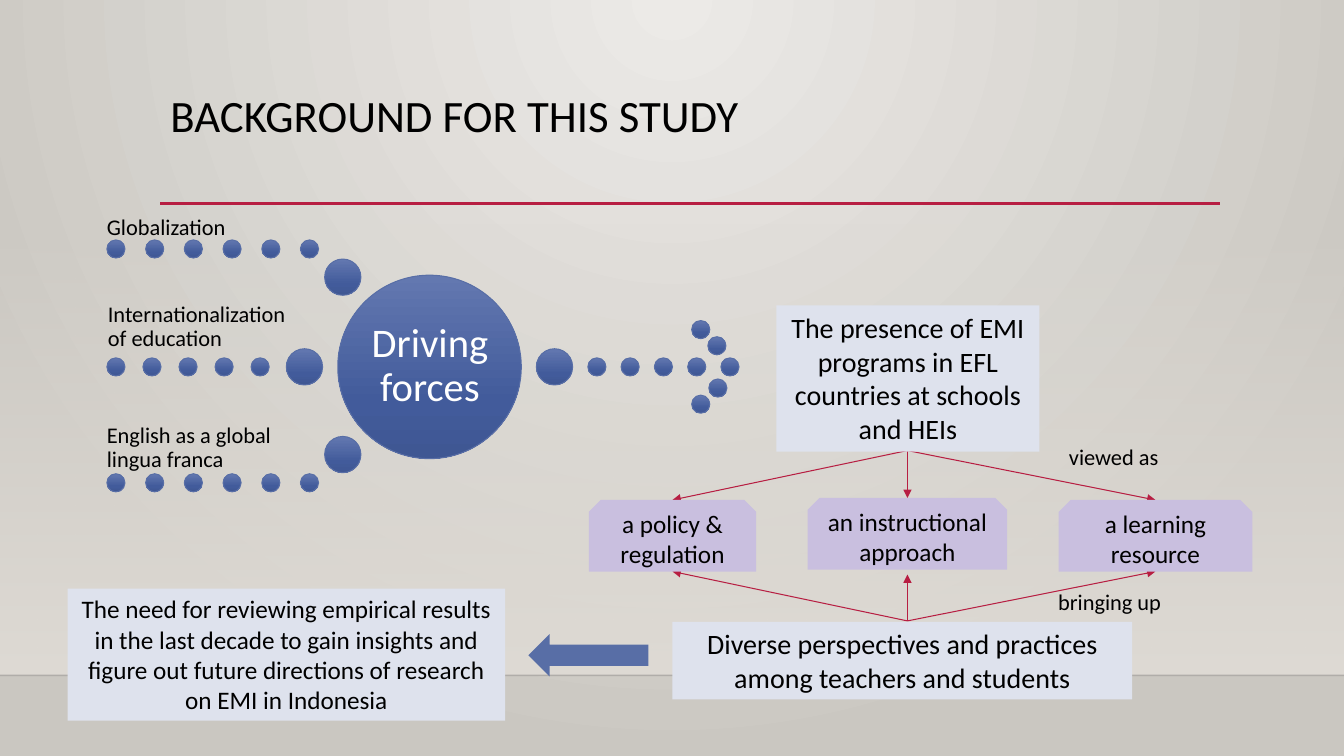
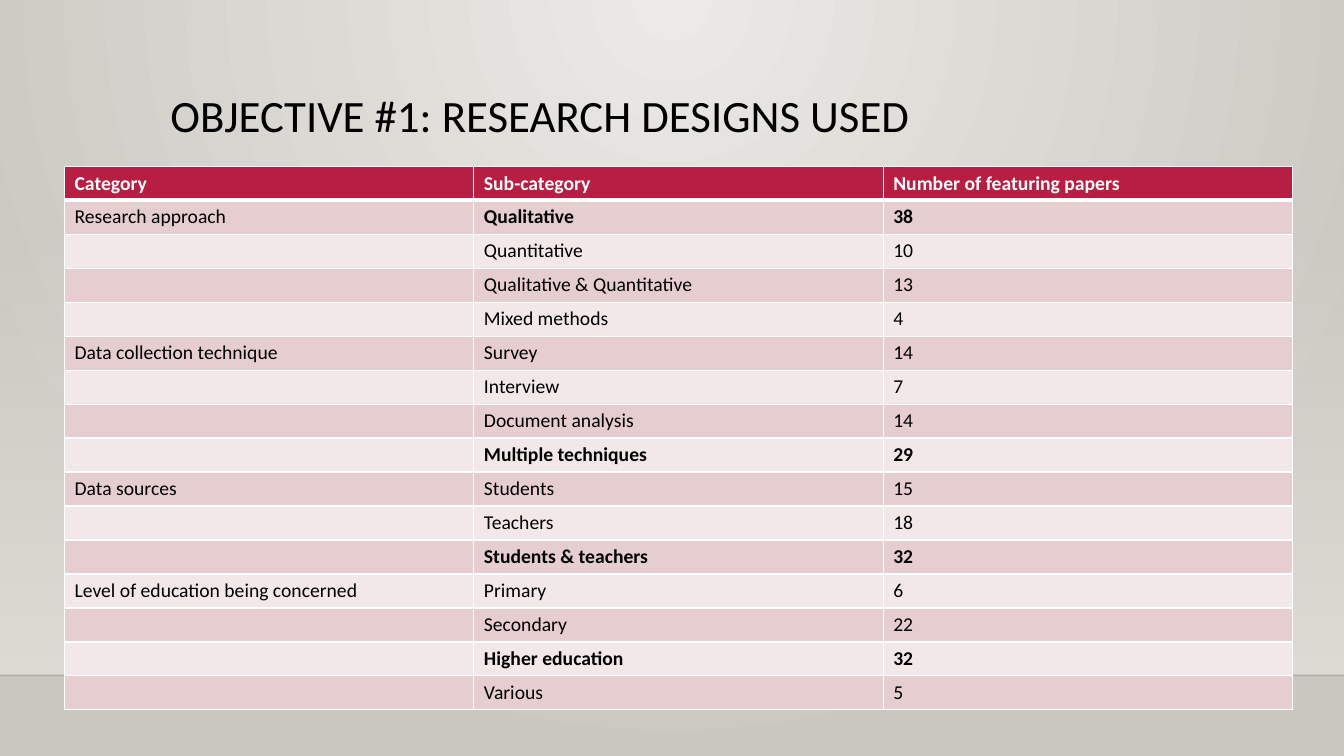
from dataclasses import dataclass
from typing import NamedTuple, Optional

from lxml.etree import SubElement
from pptx import Presentation
from pptx.dml.color import RGBColor
from pptx.enum.shapes import MSO_CONNECTOR as Connector, MSO_SHAPE as Shape
from pptx.enum.text import MSO_ANCHOR as Anchor, MSO_AUTO_SIZE as AutoSize, PP_ALIGN as Align
from pptx.oxml import parse_xml
from pptx.oxml.ns import nsdecls, qn
from pptx.util import Inches, Pt

FONT = "Calibri"
BLACK = RGBColor(0x00, 0x00, 0x00)
HORIZON = RGBColor(0x00, 0x00, 0x01)
WHITE = RGBColor(0xFF, 0xFF, 0xFF)
CRIMSON = RGBColor(0xB7, 0x1E, 0x42)
BLUE = RGBColor(0x58, 0x6E, 0xA6)
PALE_BLUE = RGBColor(0xDE, 0xE2, 0xED)
LILAC = RGBColor(0xC9, 0xBF, 0xDF)
ROSE = RGBColor(0xE6, 0xCD, 0xCF)
PALE_ROSE = RGBColor(0xF3, 0xE8, 0xE9)
WALL_LIGHT = RGBColor(0xEC, 0xEA, 0xE7)
WALL_DARK = RGBColor(0xCA, 0xC7, 0xC1)
PANEL = RGBColor(0xDF, 0xDB, 0xD5)
BALL_TOP = RGBColor(0x63, 0x78, 0xB0)
BALL_MIDDLE = RGBColor(0x42, 0x5B, 0x9B)
BALL_BOTTOM = RGBColor(0x3F, 0x57, 0x93)

DOT = 0.18
BALL = 0.36
HUB = 1.82
DOWNWARD = '<a:lin ang="5400000" scaled="0"/>'
FROM_TOP = '<a:path path="circle"><a:fillToRect l="43000" r="43000" b="100000"/></a:path>'


class Stop(NamedTuple):
    percent: int
    color: RGBColor
    opacity: int = 100


BALL_STOPS = [Stop(0, BALL_TOP), Stop(69, BALL_MIDDLE), Stop(100, BALL_BOTTOM)]


class Point(NamedTuple):
    x: float
    y: float


class DotRow(NamedTuple):
    first: float
    last: float
    top: float
    count: int


class Force(NamedTuple):
    text: str
    left: float
    top: float
    width: float


@dataclass
class Panel:
    text: str
    left: float
    top: float
    width: float
    height: float
    size: int
    color: Optional[RGBColor] = PALE_BLUE
    outline: Shape = Shape.RECTANGLE
    anchor: Anchor = Anchor.TOP


class Finding(NamedTuple):
    category: str
    subcategory: str
    papers: str
    leading: bool = False


DOT_ROWS = [
    DotRow(1.06, 2.98, 2.38, 6),
    DotRow(1.06, 2.49, 3.55, 5),
    DotRow(1.06, 2.98, 4.70, 6),
    DotRow(5.83, 7.15, 3.55, 5),
]
ARROW_TIP = [Point(6.86, 3.18), Point(7.02, 3.34), Point(7.03, 3.76), Point(6.86, 3.92)]
BALLS = [Point(3.22, 2.57), Point(2.84, 3.46), Point(3.22, 4.33), Point(5.32, 3.46)]
FORCES = [
    Force("Globalization", 1.06, 1.92, 2.11),
    Force("Internationalization of education", 1.07, 3.03, 1.88),
    Force("English as a global lingua franca", 1.06, 4.23, 2.11),
]
VIEWS = [
    Panel(text, left, top, width, 0.71, 18, LILAC, Shape.SNIP_2_SAME_RECTANGLE, Anchor.MIDDLE)
    for text, left, top, width in [
        ("a policy & regulation", 5.84, 4.96, 1.66),
        ("an instructional approach", 8.01, 4.94, 1.98),
        ("a learning resource", 10.5, 4.96, 1.92),
    ]
]
STATEMENTS = [
    Panel("The presence of EMI programs in EFL countries at schools and HEIs",
          7.7, 3.03, 2.61, 1.45, 20),
    Panel("Diverse perspectives and practices among teachers and students",
          6.67, 6.17, 4.56, 0.77, 20),
    Panel("The need for reviewing empirical results in the last decade to gain insights "
          "and figure out future directions of research on EMI in Indonesia",
          0.67, 5.84, 4.34, 1.31, 18),
]
RELATIONS = [
    Panel("viewed as", 10.27, 4.35, 1.55, 0.37, 16, None),
    Panel("bringing up", 10.23, 5.79, 1.55, 0.37, 16, None),
]
FANS = [
    (Point(9, 4.47), [Point(6.67, 4.96), Point(9, 4.94), Point(11.46, 4.96)]),
    (Point(9, 6.16), [Point(6.67, 5.67), Point(9, 5.7), Point(11.46, 5.67)]),
]
HEADINGS = ("Category", "Sub-category", "Number of featuring papers")
FINDINGS = [
    Finding("Research approach", "Qualitative", "38", True),
    Finding("", "Quantitative", "10"),
    Finding("", "Qualitative & Quantitative", "13"),
    Finding("", "Mixed methods", "4"),
    Finding("Data collection technique", "Survey", "14"),
    Finding("", "Interview", "7"),
    Finding("", "Document analysis", "14"),
    Finding("", "Multiple techniques", "29", True),
    Finding("Data sources", "Students", "15"),
    Finding("", "Teachers", "18"),
    Finding("", "Students & teachers", "32", True),
    Finding("Level of education being concerned", "Primary", "6"),
    Finding("", "Secondary", "22"),
    Finding("", "Higher education", "32", True),
    Finding("", "Various", "5"),
]


def set_gradient(holder, stops: list[Stop], direction: str) -> None:
    marks = "".join(
        f'<a:gs pos="{stop.percent * 1000}"><a:srgbClr val="{stop.color}">'
        f'<a:alpha val="{stop.opacity * 1000}"/></a:srgbClr></a:gs>'
        for stop in stops
    )
    gradient = parse_xml(
        f'<a:gradFill {nsdecls("a")} rotWithShape="1"><a:gsLst>{marks}</a:gsLst>'
        f"{direction}</a:gradFill>"
    )
    holder.replace(holder.find(qn("a:solidFill")), gradient)


def add_run(paragraph, text: str, size: int, color: RGBColor = BLACK, bold: bool = False) -> None:
    run = paragraph.add_run()
    run.text = text
    run.font.name = FONT
    run.font.size = Pt(size)
    run.font.bold = bold
    run.font.color.rgb = color


def add_figure(slide, outline: Shape, left: float, top: float, width: float, height: float,
               color: RGBColor):
    figure = slide.shapes.add_shape(
        outline, Inches(left), Inches(top), Inches(width), Inches(height))
    figure.shadow.inherit = False
    figure.fill.solid()
    figure.fill.fore_color.rgb = color
    figure.line.fill.background()
    return figure


def add_line(slide, start: Point, end: Point, color: RGBColor, width: float, arrow: bool = False):
    line = slide.shapes.add_connector(
        Connector.STRAIGHT, Inches(start.x), Inches(start.y), Inches(end.x), Inches(end.y))
    line.line.color.rgb = color
    line.line.width = Pt(width)
    properties = line.element.spPr
    if arrow:
        SubElement(properties.find(qn("a:ln")), qn("a:tailEnd"), type="triangle")
    SubElement(properties, qn("a:effectLst"))
    return line


def add_ball(slide, left: float, top: float, diameter: float) -> None:
    ball = add_figure(slide, Shape.OVAL, left, top, diameter, diameter, BLUE)
    set_gradient(ball.element.spPr, BALL_STOPS, DOWNWARD)
    ball.line.color.rgb = BLUE
    ball.line.width = Pt(0.75)


def add_label(slide, text: str, left: float, top: float, width: float, height: float, size: int,
              inset: float, anchor: Anchor, align: Align, color: RGBColor) -> None:
    frame = slide.shapes.add_textbox(
        Inches(left), Inches(top), Inches(width), Inches(height)).text_frame
    frame.word_wrap = True
    frame.vertical_anchor = anchor
    frame.margin_left = frame.margin_right = Inches(inset)
    frame.margin_top = frame.margin_bottom = Inches(inset)
    paragraph = frame.paragraphs[0]
    paragraph.alignment = align
    paragraph.line_spacing = 0.9
    add_run(paragraph, text, size, color)


def add_panel(slide, panel: Panel) -> None:
    bounds = panel.left, panel.top, panel.width, panel.height
    if panel.color is None:
        holder = slide.shapes.add_textbox(*map(Inches, bounds))
    else:
        holder = add_figure(slide, panel.outline, *bounds, panel.color)
    frame = holder.text_frame
    frame.word_wrap = True
    frame.vertical_anchor = panel.anchor
    frame.paragraphs[0].alignment = Align.CENTER
    add_run(frame.paragraphs[0], panel.text, panel.size)


def dress_master(master, layout, slide) -> None:
    master.background.fill.solid()
    set_gradient(master.element.find(".//" + qn("p:bgPr")),
                 [Stop(0, WALL_LIGHT), Stop(100, WALL_DARK)], FROM_TOP)
    wash = add_figure(slide, Shape.RECTANGLE, 0, 2.21, 13.33, 4.49, PANEL)
    set_gradient(wash.element.spPr, [Stop(0, PANEL, 0), Stop(100, PANEL)], DOWNWARD)
    horizon = add_line(slide, Point(0, 6.7), Point(13.33, 6.7), HORIZON, 1)
    SubElement(horizon.element.find(".//" + qn("a:srgbClr")), qn("a:alpha"), val="20000")
    rule = add_line(slide, Point(1.59, 2.02), Point(12.1, 2.02), CRIMSON, 2.5)
    for order, decoration in enumerate((wash, horizon, rule)):
        decoration.element.find(".//" + qn("p:cNvPr")).set("id", str(101 + order))
        master.shapes.element.insert(2 + order, decoration.element)
    for title in (master.placeholders[0], layout.placeholders[0]):
        title.left, title.top = Inches(1.59), Inches(0.88)
        title.width, title.height = Inches(10.5), Inches(1.15)


def set_title(slide, text: str) -> None:
    frame = slide.shapes.title.text_frame
    frame.vertical_anchor = Anchor.TOP
    frame.auto_size = AutoSize.NONE
    paragraph = frame.paragraphs[0]
    paragraph.alignment = Align.LEFT
    paragraph.line_spacing = 0.9
    add_run(paragraph, text, 32)


def build_background(slide) -> None:
    set_title(slide, "BACKGROUND FOR THIS STUDY")
    for row in DOT_ROWS:
        step = (row.last - row.first) / (row.count - 1)
        for index in range(row.count):
            add_ball(slide, row.first + index * step, row.top, DOT)
    for dot in ARROW_TIP:
        add_ball(slide, dot.x, dot.y, DOT)
    for ball in BALLS:
        add_ball(slide, ball.x, ball.y, BALL)
    add_ball(slide, 3.35, 2.73, HUB)
    add_label(slide, "Driving forces", 3.62, 2.99, 1.29, 1.29, 29, 0.04,
              Anchor.MIDDLE, Align.CENTER, WHITE)
    for force in FORCES:
        add_label(slide, force.text, force.left, force.top, force.width, 0.46, 16, 0,
                  Anchor.BOTTOM, Align.LEFT, BLACK)
    for origin, targets in FANS:
        for target in targets:
            add_line(slide, origin, target, CRIMSON, 0.75, arrow=True)
    for panel in STATEMENTS + VIEWS + RELATIONS:
        add_panel(slide, panel)
    add_figure(slide, Shape.LEFT_ARROW, 5.24, 6.29, 1.19, 0.42, BLUE)


def fill_cell(cell, text: str, fill: RGBColor, color: RGBColor, bold: bool, base: float) -> None:
    paragraph = cell.text_frame.paragraphs[0]
    if text:
        add_run(paragraph, text, 14, color, bold)
    else:
        SubElement(paragraph._p, qn("a:endParaRPr"), sz="1400")
    properties = cell._tc.get_or_add_tcPr()
    for side, width in (("L", 1), ("R", 1), ("T", 1), ("B", base)):
        border = SubElement(properties, qn(f"a:ln{side}"), w=str(Pt(width)))
        SubElement(SubElement(border, qn("a:solidFill")), qn("a:srgbClr"), val=str(WHITE))
    cell.fill.solid()
    cell.fill.fore_color.rgb = fill


def build_designs(slide) -> None:
    set_title(slide, "OBJECTIVE #1: RESEARCH DESIGNS USED")
    table = slide.shapes.add_table(
        len(FINDINGS) + 1, len(HEADINGS),
        Inches(0.64), Inches(1.65), Inches(12.18), Inches(5.39)).table
    for column, heading in enumerate(HEADINGS):
        fill_cell(table.cell(0, column), heading, CRIMSON, WHITE, True, 3)
    for row, finding in enumerate(FINDINGS, start=1):
        band = ROSE if row % 2 else PALE_ROSE
        for column, text in enumerate(finding[:3]):
            fill_cell(table.cell(row, column), text, band, BLACK,
                      finding.leading and column > 0, 1)


def main() -> None:
    deck = Presentation()
    deck.slide_width, deck.slide_height = Inches(13.33), Inches(7.5)
    layout = deck.slide_layouts[5]
    background, designs = (deck.slides.add_slide(layout) for _ in range(2))
    dress_master(deck.slide_master, layout, background)
    build_background(background)
    build_designs(designs)
    deck.save("out.pptx")


if __name__ == "__main__":
    main()
